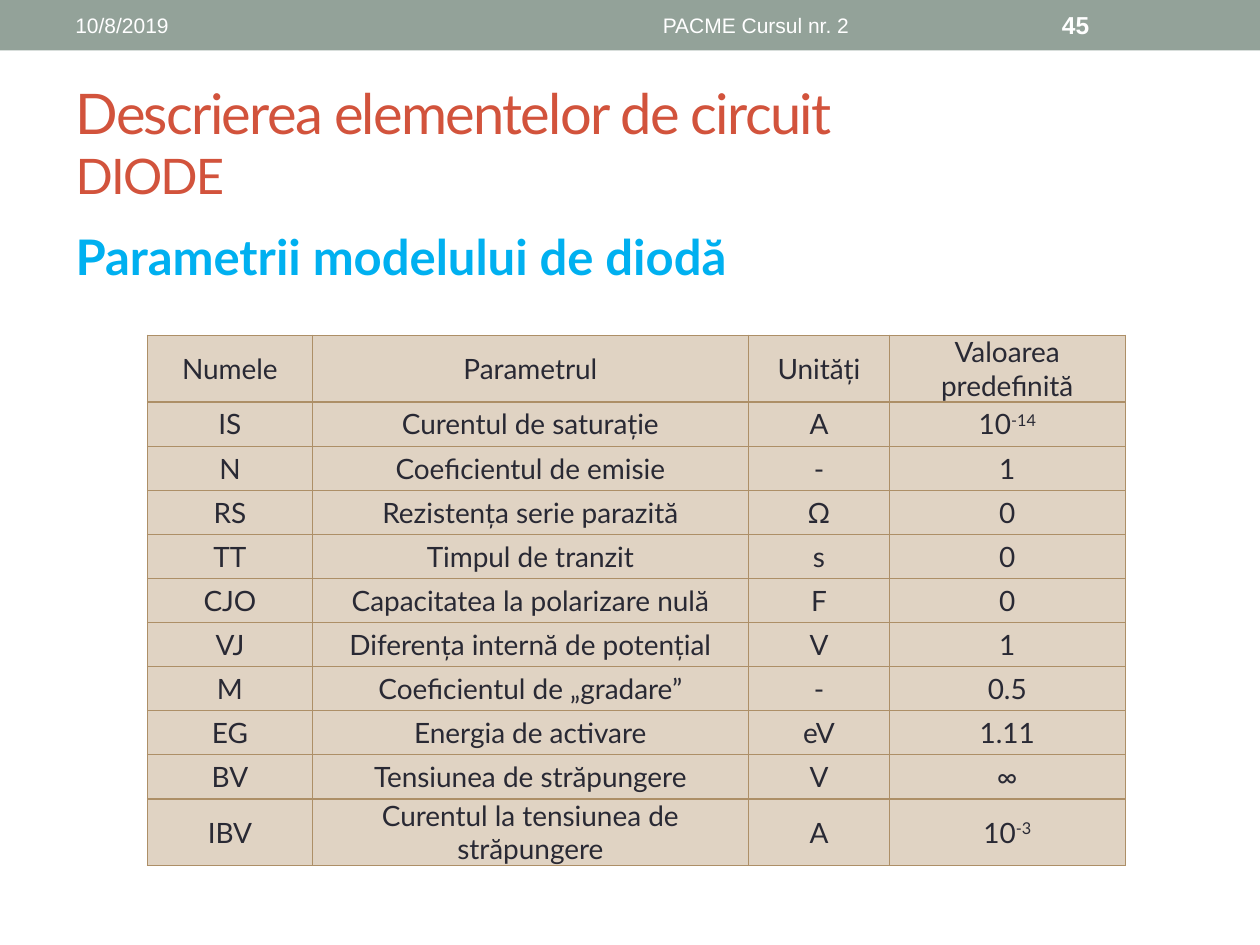
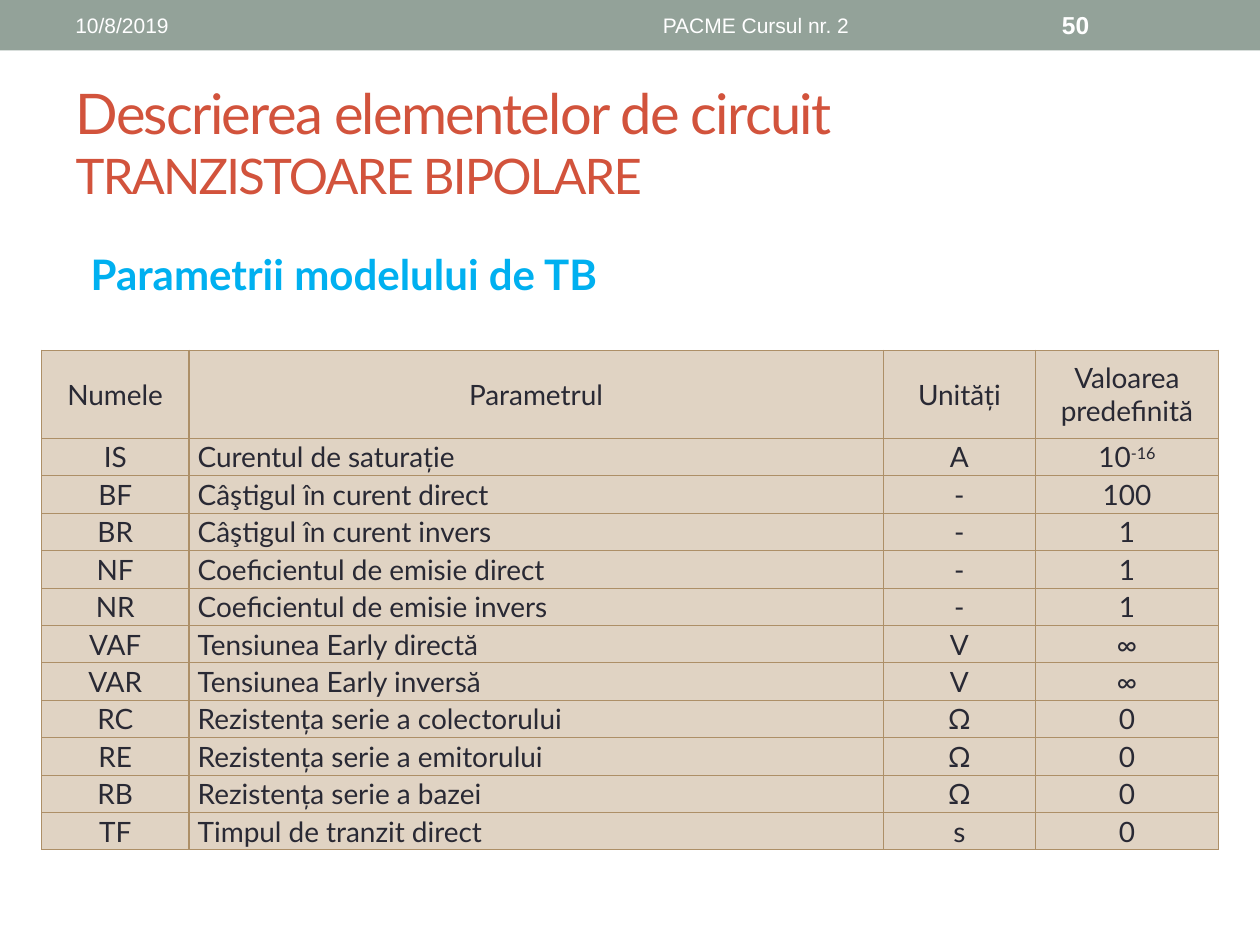
"""Build two slides with the parameter tables of the diode and bipolar transistor models."""
from copy import deepcopy

from lxml import etree
from pptx import Presentation
from pptx.dml.color import RGBColor
from pptx.enum import shapes, text
from pptx.oxml import ns
from pptx.util import Inches, Pt

COLORS = {"band": "93A299", "title": "D2533C", "heading": "00B0F0", "footer": "FFFFFF",
          "cell": "E0D3C3", "border": "AD8F67", "ink": "292934"}
LEFT, CENTER = text.PP_ALIGN.LEFT, text.PP_ALIGN.CENTER
TITLE = "Descrierea elementelor de circuit"
DATE, COURSE = "10/8/2019", "PACME Cursul nr. 2"
HEADER = ("Numele", "Parametrul", "Unități", "Valoarea predefinită")

SLIDES = [
    {
        "number": "45",
        "topic": "DIODE",
        "title_box": (0.5, 0.58, 9, 1.08),
        "heading": "Parametrii modelului de diodă",
        "heading_box": (0.5, 1.75, 9, 0.67),
        "heading_size": 28,
        "heading_indent": (0.2, -0.2),
        "table_at": (1.17, 2.66),
        "columns": (1.31, 3.46, 1.12, 1.87),
        "row_heights": [0.53] + [0.35] * 9 + [0.53],
        "cell_margin": 0.08,
        "parameter_align": CENTER,
        "rows": [
            ("IS", "Curentul de saturație", "A", "10^-14"),
            ("N", "Coeficientul de emisie", "-", "1"),
            ("RS", "Rezistența serie parazită", "Ω", "0"),
            ("TT", "Timpul de tranzit", "s", "0"),
            ("CJO", "Capacitatea la polarizare nulă", "F", "0"),
            ("VJ", "Diferența internă de potențial", "V", "1"),
            ("M", "Coeficientul de „gradare”", "-", "0.5"),
            ("EG", "Energia de activare", "eV", "1.11"),
            ("BV", "Tensiunea de străpungere", "V", "∞"),
            ("IBV", "Curentul la tensiunea de străpungere", "A", "10^-3"),
        ],
    },
    {
        "number": "50",
        "topic": "TRANZISTOARE BIPOLARE",
        "title_box": (0.5, 0.5, 9, 1.25),
        "heading": "Parametrii modelului de TB",
        "heading_box": (0.5, 1.92, 9, 0.42),
        "heading_size": 24,
        "heading_indent": (0.4, -0.28),
        "table_at": (0.33, 2.78),
        "columns": (1.17, 5.51, 1.21, 1.45),
        "row_heights": [0.7] + [0.297] * 11,
        "cell_margin": 0.07,
        "parameter_align": LEFT,
        "rows": [
            ("IS", "Curentul de saturație", "A", "10^-16"),
            ("BF", "Câştigul în curent direct", "-", "100"),
            ("BR", "Câştigul în curent invers", "-", "1"),
            ("NF", "Coeficientul de emisie direct", "-", "1"),
            ("NR", "Coeficientul de emisie invers", "-", "1"),
            ("VAF", "Tensiunea Early directă", "V", "∞"),
            ("VAR", "Tensiunea Early inversă", "V", "∞"),
            ("RC", "Rezistența serie a colectorului", "Ω", "0"),
            ("RE", "Rezistența serie a emitorului", "Ω", "0"),
            ("RB", "Rezistența serie a bazei", "Ω", "0"),
            ("TF", "Timpul de tranzit direct", "s", "0"),
        ],
    },
]


def rgb(name):
    return RGBColor.from_string(COLORS[name])


def style(run, size, color, face="Lato", bold=False):
    run.font.size, run.font.name, run.font.bold = Pt(size), face, bold
    run.font.color.rgb = rgb(color)


def place(shape, box):
    shape.left, shape.top, shape.width, shape.height = map(Inches, box)
    shape.text_frame.auto_size = text.MSO_AUTO_SIZE.NONE


def add_band(slide):
    """Put the top band on the slide master, behind everything."""
    band = slide.shapes.add_shape(shapes.MSO_SHAPE.RECTANGLE, 0, 0, Inches(10), Inches(0.4))
    band.shadow.inherit = False
    band.fill.solid()
    band.fill.fore_color.rgb = rgb("band")
    band.line.fill.background()
    band.element.nvSpPr.cNvPr.set("id", "20")
    slide.slide_layout.slide_master.shapes.element.insert(2, band.element)


def add_title(slide, content):
    title = slide.shapes.title
    place(title, content["title_box"])
    title.text_frame.vertical_anchor = text.MSO_ANCHOR.MIDDLE
    line = title.text_frame.paragraphs[0]
    line.text = f"{TITLE}\v{content['topic']}"
    line.alignment = LEFT
    for run, size in zip(line.runs, (32, 28)):
        style(run, size, "title")
        run.font._element.set("spc", "-100")
    line._p.find(ns.qn("a:br")).insert(0, deepcopy(line.runs[0].font._element))


def add_heading(slide, content):
    heading = slide.placeholders[1]
    place(heading, content["heading_box"])
    line = heading.text_frame.paragraphs[0]
    line.text = content["heading"]
    style(line.runs[0], content["heading_size"], "heading", bold=True)
    margin, indent = content["heading_indent"]
    properties = line._p.get_or_add_pPr()
    properties.set("marL", str(Inches(margin)))
    properties.set("indent", str(Inches(indent)))
    etree.SubElement(properties, ns.qn("a:buNone"))


def add_footer(slide, label, left, width, align=LEFT, size=12, bold=False):
    footer = slide.shapes.add_textbox(0, 0, 0, 0)
    place(footer, (left, 0.02, width, 0.36))
    footer.text_frame.word_wrap = True
    footer.text_frame.vertical_anchor = text.MSO_ANCHOR.MIDDLE
    line = footer.text_frame.paragraphs[0]
    line.text = label
    line.alignment = align
    style(line.runs[0], size, "footer", "Arial", bold)


def add_borders(cell):
    properties = cell._tc.get_or_add_tcPr()
    for side in ("lnL", "lnR", "lnT", "lnB"):
        border = etree.SubElement(properties, ns.qn(f"a:{side}"), w=str(Pt(0.75)))
        fill = etree.SubElement(border, ns.qn("a:solidFill"))
        etree.SubElement(fill, ns.qn("a:srgbClr"), val=COLORS["border"])


def fill_cell(cell, value, align, margin):
    cell.margin_left = cell.margin_right = Inches(margin)
    cell.margin_top = cell.margin_bottom = 0
    cell.vertical_anchor = text.MSO_ANCHOR.MIDDLE
    add_borders(cell)
    cell.fill.solid()
    cell.fill.fore_color.rgb = rgb("cell")
    line = cell.text_frame.paragraphs[0]
    line.alignment = align
    for part, baseline in zip(value.split("^"), ("0", "30000")):
        run = line.add_run()
        run.text = part
        style(run, 16, "ink")
        run.font._element.set("baseline", baseline)


def add_parameters(slide, content):
    rows, columns, heights = [HEADER] + content["rows"], content["columns"], content["row_heights"]
    left, top = content["table_at"]
    parameters = slide.shapes.add_table(
        len(rows), len(columns), Inches(left), Inches(top),
        Inches(sum(columns)), Inches(sum(heights))).table
    parameters.first_row = parameters.horz_banding = False
    for column, width in zip(parameters.columns, columns):
        column.width = Inches(width)
    for r, (values, height) in enumerate(zip(rows, heights)):
        parameters.rows[r].height = Inches(height)
        for c, value in enumerate(values):
            align = content["parameter_align"] if r and c == 1 else CENTER
            fill_cell(parameters.cell(r, c), value, align, content["cell_margin"])


def main():
    deck = Presentation()
    deck.slide_width, deck.slide_height = Inches(10), Inches(7.5)
    for content in SLIDES:
        slide = deck.slides.add_slide(deck.slide_layouts[1])
        add_title(slide, content)
        add_heading(slide, content)
        add_footer(slide, DATE, 0.5, 3.17)
        add_footer(slide, COURSE, 3.75, 4.5, CENTER)
        add_footer(slide, content["number"], 8.33, 1.17, size=14, bold=True)
        add_parameters(slide, content)
    add_band(deck.slides[0])
    deck.save("out.pptx")


if __name__ == "__main__":
    main()
